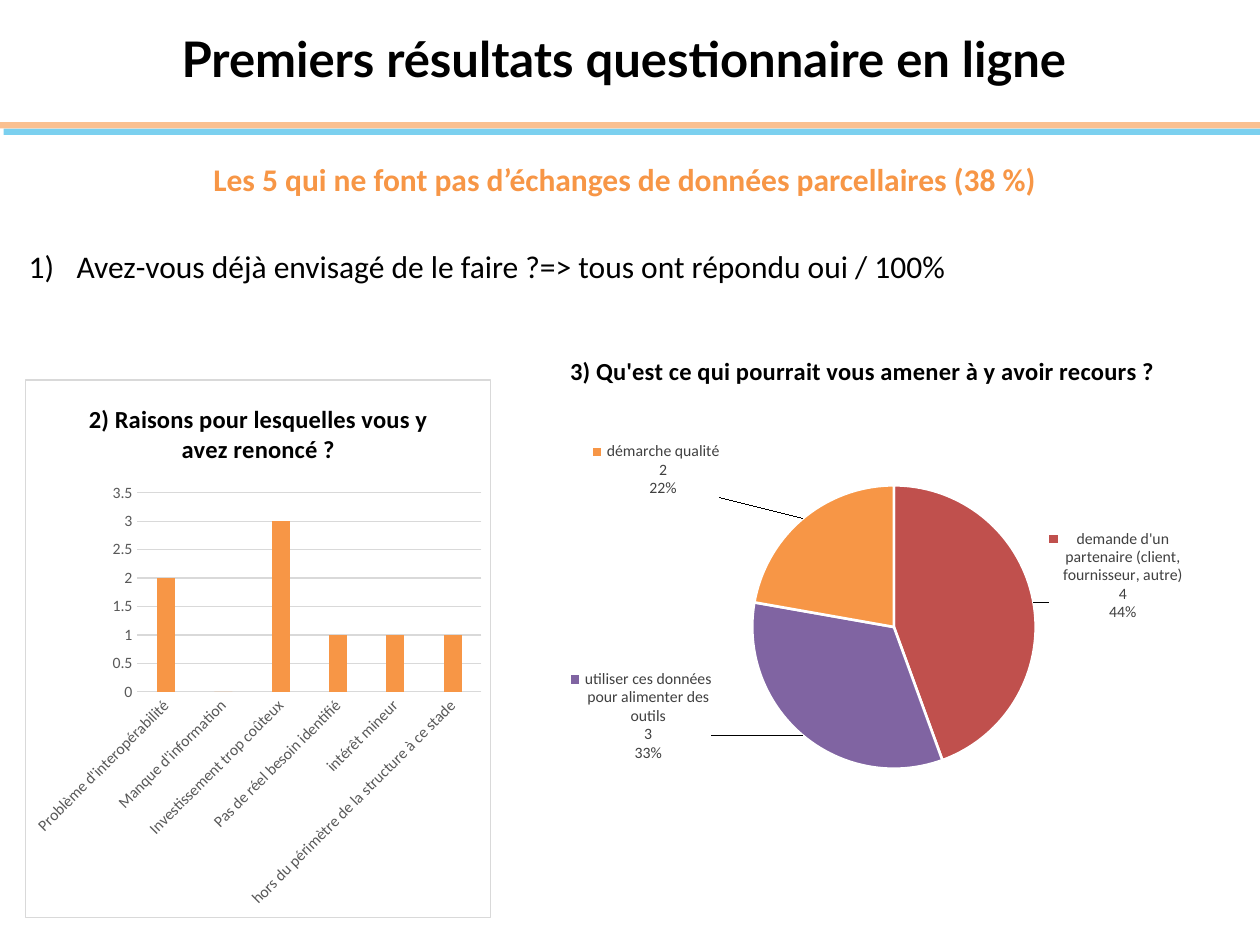
from lxml import etree
from pptx import Presentation
from pptx.chart.data import CategoryChartData
from pptx.dml.color import RGBColor
from pptx.enum.chart import XL_CHART_TYPE, XL_TICK_MARK
from pptx.enum.shapes import MSO_SHAPE
from pptx.enum.text import MSO_ANCHOR, PP_ALIGN
from pptx.oxml import parse_xml
from pptx.oxml.ns import nsdecls, qn
from pptx.util import Inches, Pt

COLUMN, PIE = XL_CHART_TYPE.COLUMN_CLUSTERED, XL_CHART_TYPE.PIE
NO_TICK = XL_TICK_MARK.NONE
RECTANGLE = MSO_SHAPE.RECTANGLE
TOP, MIDDLE = MSO_ANCHOR.TOP, MSO_ANCHOR.MIDDLE
LEFT, CENTER = PP_ALIGN.LEFT, PP_ALIGN.CENTER

BLACK = RGBColor(0x00, 0x00, 0x00)
WHITE = RGBColor(0xFF, 0xFF, 0xFF)
ORANGE = RGBColor(0xF7, 0x96, 0x46)
PEACH = RGBColor(0xFA, 0xC0, 0x90)
SKY = RGBColor(0x7B, 0xD0, 0xEF)
RED = RGBColor(0xC0, 0x50, 0x4D)
PURPLE = RGBColor(0x80, 0x64, 0xA2)
GRID_GREY = RGBColor(0xD9, 0xD9, 0xD9)
AXIS_GREY = RGBColor(0x59, 0x59, 0x59)
LABEL_GREY = RGBColor(0x40, 0x40, 0x40)


def add_span(para, text, size, color, bold=False, font="Calibri"):
    span = para.add_run()
    span.text = text
    span.font.name = font
    span.font.size = Pt(size)
    span.font.bold = bold
    span.font.color.rgb = color


def add_titled_chart(kind, place, categories, values, title, plot_area, frame_xml):
    """Add a one-series chart; plot_area holds x, y, w, h as shares of the chart."""
    data = CategoryChartData()
    data.categories = categories
    data.add_series("Series 1", values)
    chart = page.shapes.add_chart(kind, *map(Inches, place), data).chart
    chart.has_legend = False
    chart.font.name = "Calibri"
    chart.font.size = Pt(10)
    chart.font.color.rgb = BLACK
    add_span(chart.chart_title.text_frame.paragraphs[0], title, 14, BLACK, True)
    chart.chart_title.include_in_layout = False

    chart_xml = chart.element.find(qn("c:chart"))
    chart_xml.addnext(parse_xml(f'<c:spPr {nsdecls("c", "a")}>{frame_xml}</c:spPr>'))
    plot_xml = chart_xml.find(qn("c:plotArea"))
    for old in plot_xml.findall(qn("c:layout")):
        plot_xml.remove(old)
    sizes = "".join(f'<c:{key} val="{val}"/>' for key, val in zip("xywh", plot_area))
    plot_xml.insert(0, parse_xml(
        f'<c:layout {nsdecls("c")}><c:manualLayout><c:layoutTarget val="inner"/>'
        f'<c:xMode val="edge"/><c:yMode val="edge"/>{sizes}</c:manualLayout></c:layout>'))
    return chart


deck = Presentation()
deck.slide_width, deck.slide_height = Inches(10), Inches(7.5)
page = deck.slides.add_slide(deck.slide_layouts[6])

# Double rule under the title
for left, top, color in [(0.03, 1.02, SKY), (0, 0.97, PEACH)]:
    band = page.shapes.add_shape(RECTANGLE, Inches(left), Inches(top), Inches(10), Inches(0.05))
    band.shadow.inherit = False
    band.fill.solid()
    band.fill.fore_color.rgb = color
    band.line.fill.background()

# Title and body text
frames = []
for place, anchor in [((0.04, 0.08, 9.82, 0.76), MIDDLE), ((0.13, 1.22, 9.66, 1.2), TOP)]:
    frame = page.shapes.add_textbox(*map(Inches, place)).text_frame
    frame.word_wrap = True
    frame.vertical_anchor = anchor
    frames.append(frame)
title_frame, body_frame = frames

para = title_frame.paragraphs[0]
para.alignment = CENTER
add_span(para, "Premiers résultats questionnaire en ligne", 28, BLACK, True, "Lato")

para = body_frame.paragraphs[0]
para.alignment = CENTER
add_span(para, "Les 5 qui ne font pas d’échanges de données parcellaires (38 %)", 18, ORANGE, True)

para = body_frame.add_paragraph()
para.alignment = LEFT
para.space_before = Pt(28)
properties = para._p.get_or_add_pPr()
properties.set("marL", str(Inches(0.38)))
properties.set("indent", str(-Inches(0.38)))
etree.SubElement(properties, qn("a:buFont"), typeface="+mj-lt")
etree.SubElement(properties, qn("a:buAutoNum"), type="arabicParenR")
add_span(para, "Avez-vous déjà envisagé de le faire ?=> tous ont répondu oui / 100%", 18, BLACK)

# Column chart: reasons for giving up
reasons = add_titled_chart(
    COLUMN, (0.2, 3.01, 3.7, 4.28),
    ["Problème d'interopérabilité", "Manque d'information", "Investissement trop coûteux",
     "Pas de réel besoin identifié", "intérêt mineur",
     "hors du périmètre de la structure à ce stade"],
    [2, 0, 3, 1, 1, 1],
    "2) Raisons pour lesquelles vous y avez renoncé ?", (0.24, 0.21, 0.74, 0.37),
    f'<a:solidFill><a:srgbClr val="{WHITE}"/></a:solidFill><a:ln w="{Pt(0.75)}">'
    f'<a:solidFill><a:srgbClr val="{GRID_GREY}"/></a:solidFill></a:ln>')
columns = reasons.plots[0]
columns.gap_width = 219
columns.overlap = -27
columns.vary_by_categories = False
columns.series[0].format.fill.solid()
columns.series[0].format.fill.fore_color.rgb = ORANGE

for axis in (reasons.category_axis, reasons.value_axis):
    axis.major_tick_mark = axis.minor_tick_mark = NO_TICK
    axis.tick_labels.font.name = "Calibri"
    axis.tick_labels.font.size = Pt(9)
    axis.tick_labels.font.color.rgb = AXIS_GREY
reasons.category_axis._element.find(qn("c:txPr")).find(qn("a:bodyPr")).set("rot", "-2700000")
reasons.value_axis.minimum_scale = 0
reasons.value_axis.maximum_scale = 3.5
reasons.value_axis.major_unit = 0.5
reasons.value_axis.format.line.fill.background()
for line in (reasons.category_axis.format.line, reasons.value_axis.major_gridlines.format.line):
    line.color.rgb = GRID_GREY
    line.width = Pt(0.75)

# Pie chart: what could lead to using it
incentives = add_titled_chart(
    PIE, (3.72, 2.64, 6.25, 4.03),
    ["demande d'un partenaire (client, fournisseur, autre)",
     "utiliser ces données pour alimenter des outils", "démarche qualité"],
    [4, 3, 2],
    "3) Qu'est ce qui pourrait vous amener à y avoir recours ?", (0.36, 0.28, 0.36, 0.6),
    "<a:noFill/><a:ln><a:noFill/></a:ln>")
incentives.plots[0].vary_by_categories = True
slices = incentives.plots[0].series[0]
for index, color in enumerate([RED, PURPLE, ORANGE]):
    wedge = slices.points[index].format
    wedge.fill.solid()
    wedge.fill.fore_color.rgb = color
    wedge.line.color.rgb = WHITE
    wedge.line.width = Pt(1.5)

label_style = (
    '<c:spPr><a:noFill/><a:ln><a:noFill/></a:ln></c:spPr>'
    '<c:txPr><a:bodyPr wrap="square"/><a:p><a:pPr><a:defRPr sz="900">'
    f'<a:solidFill><a:srgbClr val="{LABEL_GREY}"/></a:solidFill>'
    '<a:latin typeface="Calibri"/></a:defRPr></a:pPr><a:endParaRPr lang="fr-FR"/></a:p></c:txPr>'
    '<c:dLblPos val="outEnd"/><c:showLegendKey val="1"/><c:showVal val="1"/>'
    '<c:showCatName val="1"/><c:showSerName val="0"/><c:showPercent val="1"/>'
    '<c:showBubbleSize val="0"/><c:separator>\n</c:separator>')
label_shifts = [(0.01, 0.04), (-0.11, -0.14), (-0.1, -0.03)]
point_labels = "".join(
    f'<c:dLbl><c:idx val="{index}"/><c:layout><c:manualLayout><c:x val="{x}"/><c:y val="{y}"/>'
    f'</c:manualLayout></c:layout>{label_style}</c:dLbl>'
    for index, (x, y) in enumerate(label_shifts))
slices._element.find(qn("c:cat")).addprevious(parse_xml(
    f'<c:dLbls {nsdecls("c", "a")}>{point_labels}{label_style}'
    '<c:showLeaderLines val="1"/></c:dLbls>'))

deck.save("out.pptx")
